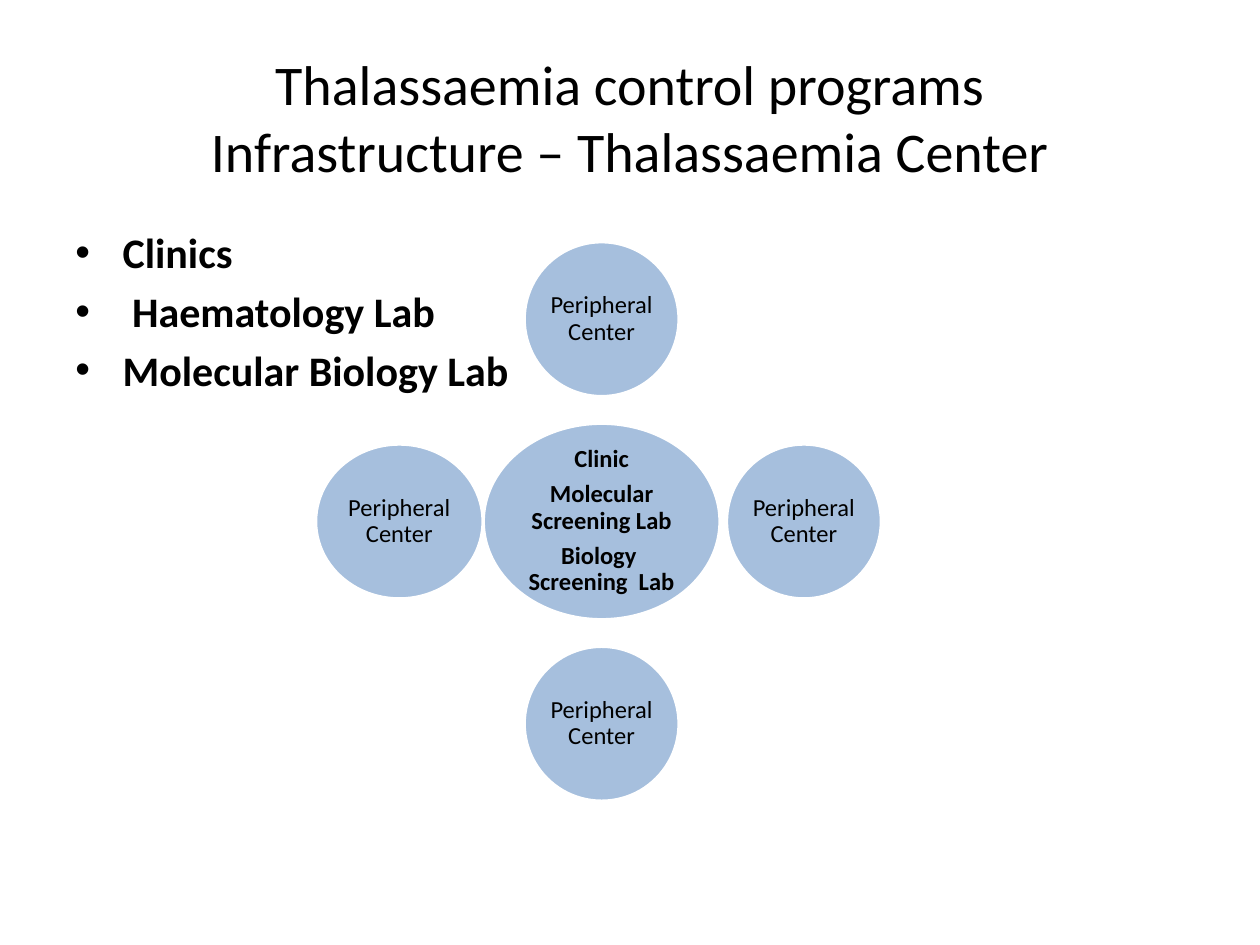
from dataclasses import dataclass

from lxml.etree import SubElement as Sub
from pptx import Presentation as Deck
from pptx.dml.color import RGBColor as Color
from pptx.enum.shapes import MSO_SHAPE as Kind
from pptx.enum.text import MSO_ANCHOR as Anchor, PP_ALIGN as Align
from pptx.oxml.ns import qn
from pptx.util import Pt


@dataclass(frozen=True)
class Theme:
    """Hold the colours, font and type sizes."""
    font: str = "Calibri"
    ink: Color = Color(0x00, 0x00, 0x00)
    blue: Color = Color(0x4F, 0x81, 0xBD)
    rim: Color = Color(0xFF, 0xFF, 0xFF)
    title: int = 32
    body: int = 24
    label: int = 14


THEME = Theme()


def write(frame, text, size, bold=False, align=Align.CENTER):
    """Fill a text frame and style its runs."""
    frame.word_wrap = True
    frame.text = text
    for para in frame.paragraphs:
        para.alignment = align
        for run in para.runs:
            font = run.font
            font.name, font.size, font.bold = THEME.font, Pt(size), bold
            font.color.rgb = THEME.ink


def add_title(slide, text):
    """Add the centred heading."""
    frame = slide.shapes.add_textbox(Pt(36), Pt(21.6), Pt(648), Pt(90)).text_frame
    frame.vertical_anchor = Anchor.MIDDLE
    write(frame, text, THEME.title)


def add_list(slide, items):
    """Add the bold bullet list."""
    frame = slide.shapes.add_textbox(Pt(36), Pt(126), Pt(648), Pt(356.4)).text_frame
    write(frame, "\n".join(items), THEME.body, True, Align.LEFT)
    for para in frame.paragraphs:
        para.space_before = Pt(0.2 * THEME.body)
        props = para._p.get_or_add_pPr()
        props.set("marL", str(Pt(27)))
        props.set("indent", str(-Pt(27)))
        Sub(props, qn("a:buFont"), typeface="Arial")
        Sub(props, qn("a:buChar"), char="•")


def add_disc(slide, mid, size, text, bold=False):
    """Add a half-clear ellipse with a label, placed by its centre."""
    (x, y), (wide, high) = mid, size
    disc = slide.shapes.add_shape(
        Kind.OVAL, Pt(x - wide / 2), Pt(y - high / 2), Pt(wide), Pt(high))
    disc.shadow.inherit = False
    disc.fill.solid()
    disc.fill.fore_color.rgb = THEME.blue
    tint = disc._element.spPr.find(qn("a:solidFill"))[0]
    Sub(tint, qn("a:alpha"), val="50000")
    disc.line.color.rgb = THEME.rim
    disc.line.width = Pt(2)
    frame = disc.text_frame
    frame.margin_left = frame.margin_right = Pt(1.4)
    frame.margin_top = frame.margin_bottom = Pt(1.4)
    frame.vertical_anchor = Anchor.MIDDLE
    write(frame, text, THEME.label, bold)
    for para in frame.paragraphs:
        para.line_spacing = 0.9
        para.space_after = Pt(0.35 * THEME.label)


def add_wheel(slide, x, y, reach):
    """Add the hub and the four discs around it."""
    jobs = ("Clinic", "Molecular Screening Lab", "Biology  Screening  Lab")
    add_disc(slide, (x, y), (135.4, 112.4), "\n".join(jobs), True)
    for across, down, wide in ((0, -1, 88.6), (1, 0, 88.6), (0, 1, 88.6), (-1, 0, 95.8)):
        mid = x + across * reach, y + down * reach
        add_disc(slide, mid, (wide, 88.6), "Peripheral Center")


def main():
    """Build and save the slide."""
    deck = Deck()
    deck.slide_width, deck.slide_height = Pt(720), Pt(540)
    slide = deck.slides.add_slide(deck.slide_layouts[6])
    add_title(slide, "Thalassaemia control programs\vInfrastructure – Thalassaemia Center")
    add_list(slide, ("Clinics", " Haematology Lab", "Molecular Biology Lab"))
    add_wheel(slide, 343.8, 298, 115.6)
    deck.save("out.pptx")


if __name__ == "__main__":
    main()
